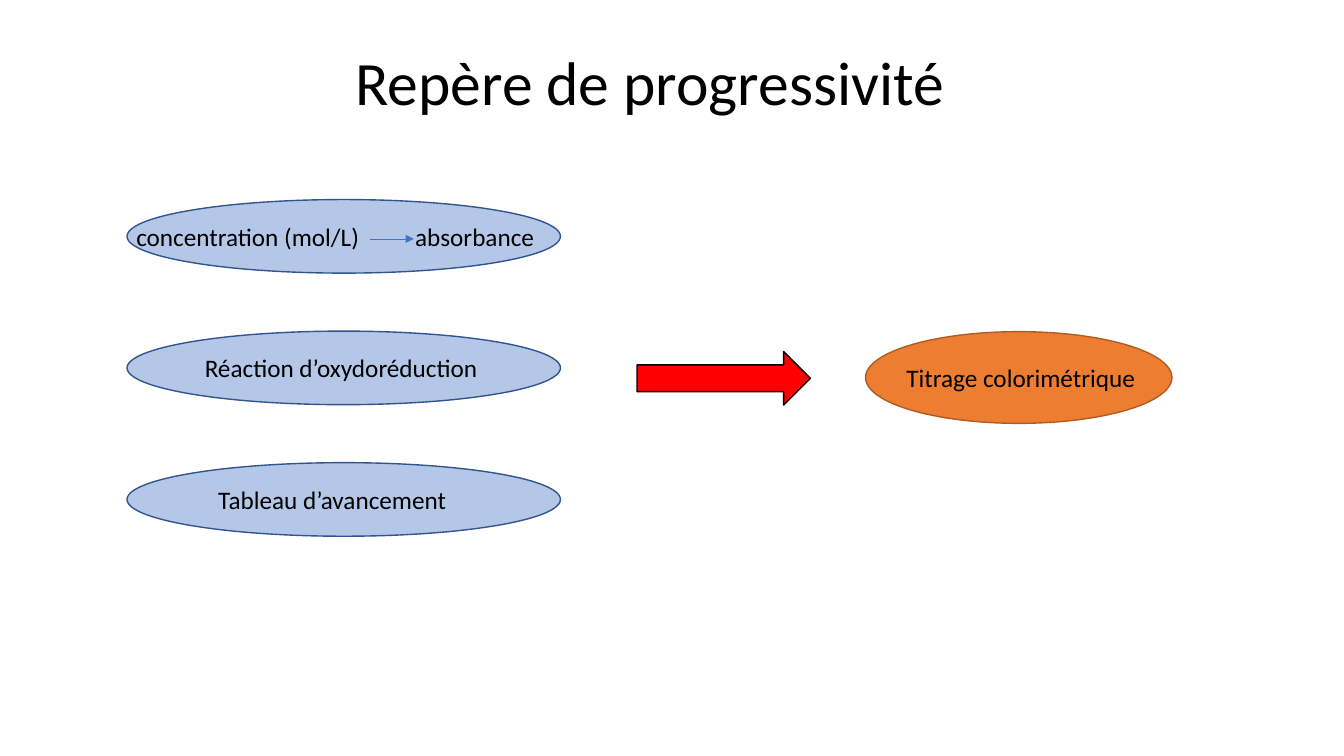
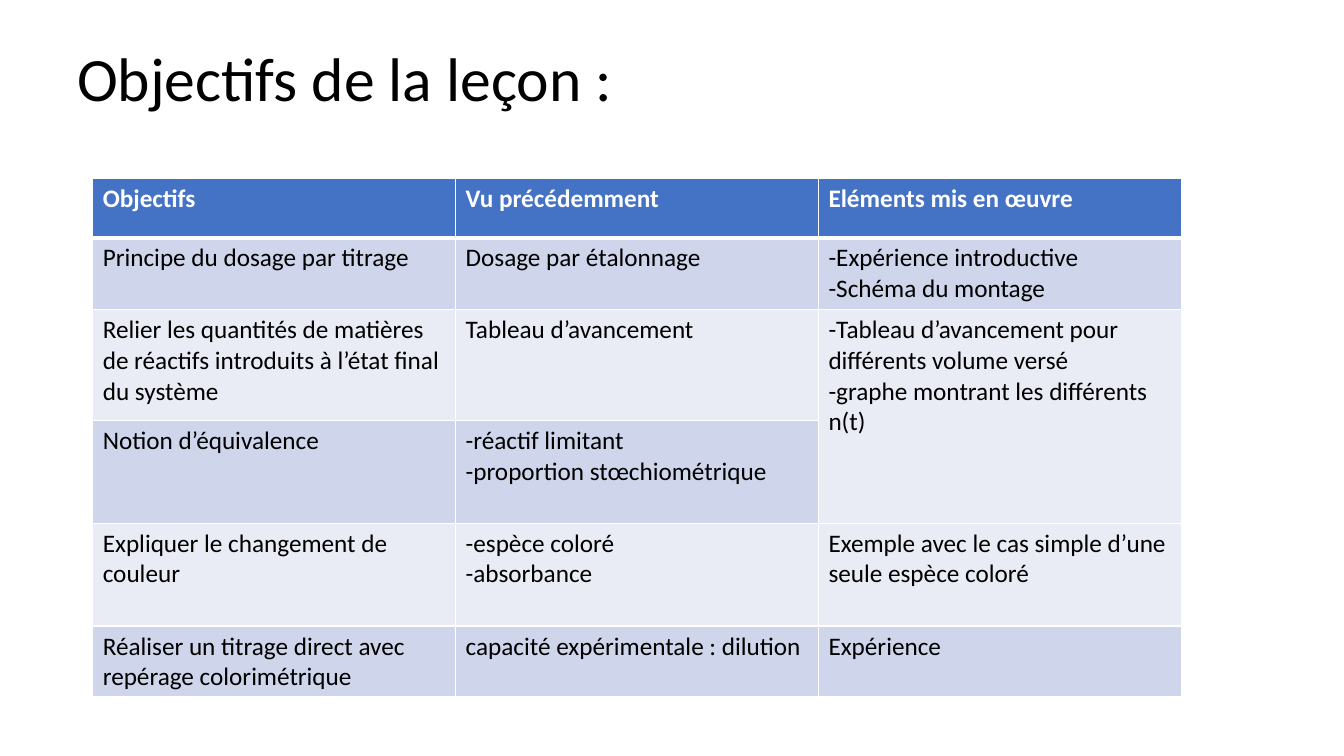
from lxml import etree
from pptx import Presentation, util as u
from pptx.dml.color import RGBColor
from pptx.enum import shapes, text
from pptx.oxml import ns

# Shared style
SLIDE_W, SLIDE_H = u.Inches(13.33), u.Inches(7.5)
FONT = "Calibri"
TITLE_SIZE, BODY_SIZE = 44, 18
COLORS = {
    "ink": "000000", "white": "FFFFFF",
    "prior": "B4C7E7", "prior_line": "325491",
    "goal": "ED7D31", "goal_line": "AF5C24",
    "progress": "FF0000", "header": "4472C4",
    "band_dark": "CFD5EA", "band_light": "E9EBF5",
}

# Prior knowledge: label and left edge of its text (% of slide width)
PRIOR_TOPICS = [
    ("concentration (mol/L)\tabsorbance", 9.4),
    ("Réaction d’oxydoréduction", 14.5),
    ("Tableau d’avancement", 15.5),
]

OBJECTIVES = [
    ["Objectifs", "Vu précédemment", "Eléments mis en œuvre"],
    ["Principe du dosage par titrage", "Dosage par étalonnage",
     "-Expérience introductive\n-Schéma du montage"],
    ["Relier les quantités de matières de réactifs introduits à l’état final du système",
     "Tableau d’avancement",
     "-Tableau d’avancement pour différents volume versé\n"
     "-graphe montrant les différents n(t)"],
    ["Notion d’équivalence", "-réactif limitant\n-proportion stœchiométrique", ""],
    ["Expliquer le changement de couleur", "-espèce coloré\n-absorbance",
     "Exemple avec le cas simple d’une seule espèce coloré"],
    ["Réaliser un titrage direct avec repérage colorimétrique",
     "capacité expérimentale : dilution", "Expérience"],
]
ROW_HEIGHTS = [7.87, 9.47, 14.67, 13.6, 13.6, 9.33]


def color(name):
    return RGBColor.from_string(COLORS[name])


def across(percent):
    return round(SLIDE_W * percent / 100)


def down(percent):
    return round(SLIDE_H * percent / 100)


def place(left, top, width, height):
    """Turn shares of the slide (%) into a position and a size."""
    return across(left), down(top), across(width), down(height)


def write(frame, words, size=BODY_SIZE, ink="ink", bold=False):
    frame.text = words
    for paragraph in frame.paragraphs:
        for run in paragraph.runs:
            run.font.name = FONT
            run.font.size = u.Pt(size)
            run.font.bold = bold
            run.font.color.rgb = color(ink)


def add_label(parent, words, box, size=BODY_SIZE):
    frame = parent.add_textbox(*place(*box)).text_frame
    frame.word_wrap = True
    write(frame, words, size)
    return frame


def add_title(slide, words, box):
    frame = add_label(slide.shapes, words, box, TITLE_SIZE)
    frame.vertical_anchor = text.MSO_ANCHOR.MIDDLE
    frame.paragraphs[0].line_spacing = 0.9


def add_figure(parent, kind, box, fill, line):
    figure = parent.add_shape(kind, *place(*box))
    figure.shadow.inherit = False
    figure.fill.solid()
    figure.fill.fore_color.rgb = color(fill)
    figure.line.color.rgb = color(line)
    figure.line.width = u.Pt(1)


def add_thin_arrow(parent, start, end, level):
    arrow = parent.add_connector(shapes.MSO_CONNECTOR.STRAIGHT, across(start),
                                 down(level), across(end), down(level))
    arrow.line.color.rgb = color("header")
    arrow.line.width = u.Pt(0.5)
    etree.SubElement(arrow.line._get_or_add_ln(), ns.qn("a:tailEnd"), type="triangle")
    etree.SubElement(arrow._element.spPr, ns.qn("a:effectLst"))


def add_tab_stop(paragraph, position):
    tabs = etree.SubElement(paragraph._p.get_or_add_pPr(), ns.qn("a:tabLst"))
    etree.SubElement(tabs, ns.qn("a:tab"), pos=str(across(position)), algn="l")


def add_borders(cell, top, bottom):
    properties = cell._tc.get_or_add_tcPr()
    for side, width in (("L", 1), ("R", 1), ("T", top), ("B", bottom)):
        line = etree.SubElement(properties, ns.qn("a:ln" + side), w=str(u.Pt(width)))
        fill = etree.SubElement(line, ns.qn("a:solidFill"))
        etree.SubElement(fill, ns.qn("a:srgbClr"), val=COLORS["white"])


def add_objectives(slide, rows):
    columns = len(rows[0])
    table = slide.shapes.add_table(
        len(rows), columns, *place(6.9, 23.6, 81, sum(ROW_HEIGHTS))).table
    for column in table.columns:
        column.width = across(81 / columns)
    for r, row in enumerate(rows):
        table.rows[r].height = down(ROW_HEIGHTS[r])
        header = r == 0
        band = "header" if header else ("band_light", "band_dark")[r % 2]
        for c, words in enumerate(row):
            cell = table.cell(r, c)
            write(cell.text_frame, words, ink="white" if header else "ink", bold=header)
            add_borders(cell, top=3 if r == 1 else 1, bottom=3 if header else 1)
            cell.fill.solid()
            cell.fill.fore_color.rgb = color(band)
    table.cell(2, 2).merge(table.cell(3, 2))


def build_progression(slide):
    add_title(slide, "Repère de progressivité", (25.7, 1.6, 47.6, 19.3))

    # Prior topics, stacked at equal steps
    for i, (topic, text_left) in enumerate(PRIOR_TOPICS):
        top = 26.4 + 17.4 * i
        group = slide.shapes.add_group_shape().shapes
        add_figure(group, shapes.MSO_SHAPE.OVAL, (9.45, top, 32.25, 9.73),
                   "prior", "prior_line")
        label = add_label(group, topic, (text_left, top + 2.2, 34.4, 5.33))
        if "\t" in topic:
            add_tab_stop(label.paragraphs[0], 20.75)
            add_thin_arrow(group, 27.5, 30.8, 31.6)

    # Where the topics lead
    outcome = slide.shapes.add_group_shape().shapes
    add_figure(outcome, shapes.MSO_SHAPE.OVAL, (64.4, 43.87, 22.8, 12.13),
               "goal", "goal_line")
    add_figure(outcome, shapes.MSO_SHAPE.RIGHT_ARROW, (47.4, 46.5, 12.9, 7.07),
               "progress", "ink")
    add_label(outcome, "Titrage colorimétrique", (66.7, 47.33, 23.85, 5.33))


def build_objectives(slide):
    add_title(slide, "Objectifs de la leçon :", (5, 1.1, 86.25, 19.3))
    add_objectives(slide, OBJECTIVES)


def main():
    deck = Presentation()
    deck.slide_width, deck.slide_height = SLIDE_W, SLIDE_H
    for build in (build_progression, build_objectives):
        build(deck.slides.add_slide(deck.slide_layouts[6]))
    deck.save("out.pptx")


if __name__ == "__main__":
    main()
